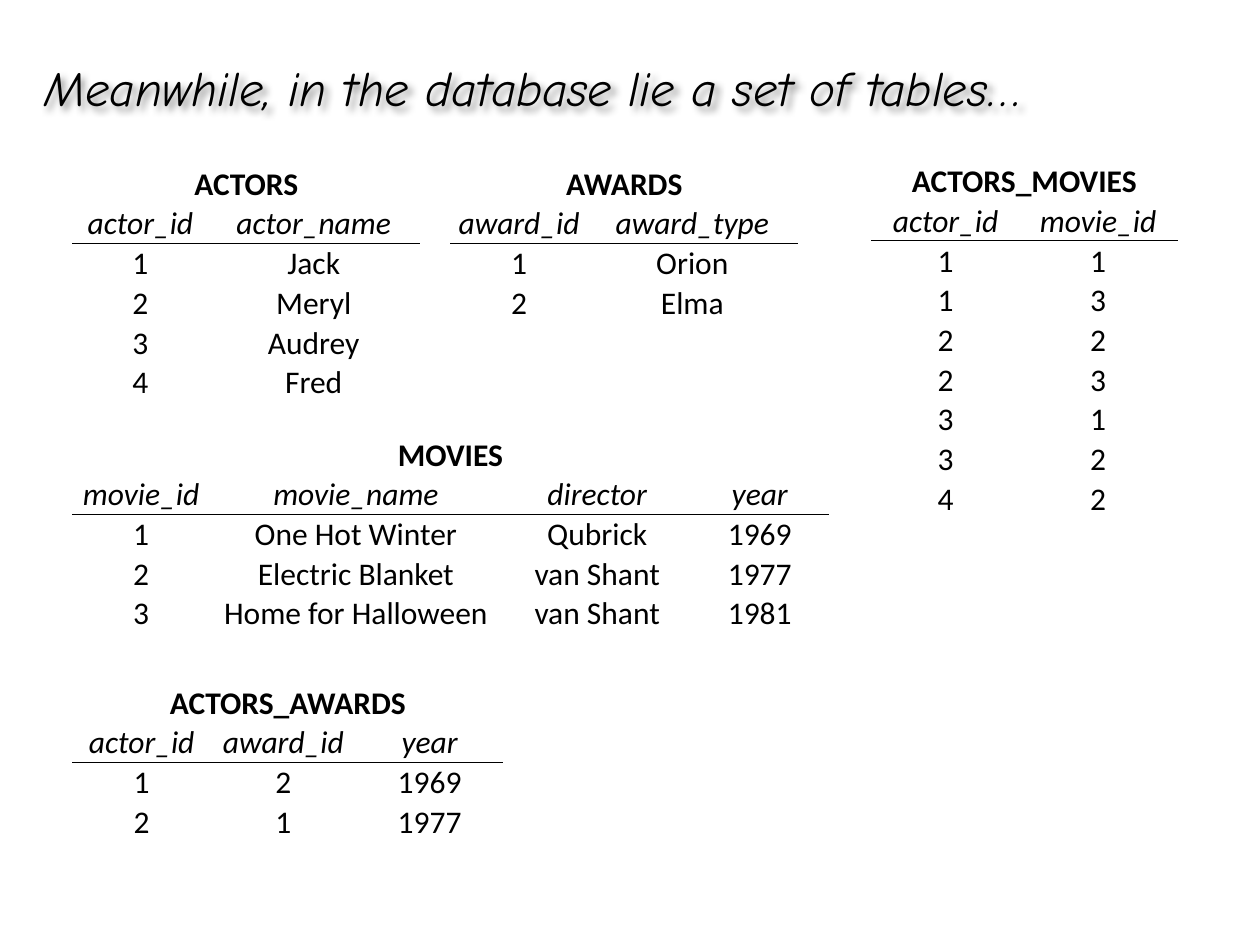
from pptx import Presentation
from pptx.dml.color import RGBColor
from pptx.enum.text import MSO_ANCHOR, PP_ALIGN
from pptx.oxml import parse_xml
from pptx.oxml.ns import nsdecls
from pptx.util import Inches, Pt

CENTER, LEFT = PP_ALIGN.CENTER, PP_ALIGN.LEFT
BOTTOM, MIDDLE = MSO_ANCHOR.BOTTOM, MSO_ANCHOR.MIDDLE
TITLE_ONLY = 5
BLACK = "000000"
ROW_HEIGHT = 0.31

# Table name, left, top, column widths, column names, records
DATABASE = [
    ("ACTORS", 0.58, 1.3, [1.07, 1.68], ["actor_id", "actor_name"],
     [("1", "Jack"), ("2", "Meryl"), ("3", "Audrey"), ("4", "Fred")]),
    ("MOVIES", 0.58, 3.45, [1.08, 2.33, 1.5, 1.08],
     ["movie_id", "movie_name", "director", "year"],
     [("1", "One Hot Winter", "Qubrick", "1969"),
      ("2", "Electric Blanket", "van Shant", "1977"),
      ("3", "Home for Halloween", "van Shant", "1981")]),
    ("ACTORS_MOVIES", 6.92, 1.28, [1.17, 1.25], ["actor_id", "movie_id"],
     [("1", "1"), ("1", "3"), ("2", "2"), ("2", "3"),
      ("3", "1"), ("3", "2"), ("4", "2")]),
    ("AWARDS", 3.58, 1.3, [1.08, 1.67], ["award_id", "award_type"],
     [("1", "Orion"), ("2", "Elma")]),
    ("ACTORS_AWARDS", 0.58, 5.42, [1.09, 1.16, 1.16],
     ["actor_id", "award_id", "year"],
     [("1", "2", "1969"), ("2", "1", "1977")]),
]


def rgb(hex_color):
    return RGBColor.from_string(hex_color)


def format_text(paragraph, font_name, size, align, bold=False, italic=False):
    paragraph.alignment = align
    for run in paragraph.runs:
        font = run.font
        font.name, font.size = font_name, Pt(size)
        font.bold, font.italic = bold, italic
        font.color.rgb = rgb(BLACK)


def add_rule(cell, side):
    """Draw a thin border on one side of a cell: "T" or "B"."""
    cell._tc.get_or_add_tcPr().insert(0, parse_xml(
        f'<a:ln{side} {nsdecls("a")} w="6350"><a:solidFill>'
        f'<a:srgbClr val="{BLACK}"/></a:solidFill></a:ln{side}>'))


def fill_cell(cell, text, bold=False, italic=False):
    cell.fill.background()
    cell.vertical_anchor = BOTTOM
    cell.margin_left = cell.margin_right = cell.margin_top = Inches(0.01)
    cell.margin_bottom = 0
    cell.text_frame.text = text
    format_text(cell.text_frame.paragraphs[0], "Calibri", 18, CENTER, bold, italic)


def add_database_table(slide, name, left, top, widths, fields, records):
    rows = [[name] + [""] * (len(fields) - 1), fields, *records]
    table = slide.shapes.add_table(
        len(rows), len(fields), Inches(left), Inches(top),
        Inches(sum(widths)), Inches(ROW_HEIGHT * len(rows))).table
    table.first_row = table.horz_banding = False
    for column, width in zip(table.columns, widths):
        column.width = Inches(width)

    for row_index, row in enumerate(rows):
        for column_index, text in enumerate(row):
            cell = table.cell(row_index, column_index)
            fill_cell(cell, text, bold=row_index == 0, italic=row_index == 1)
            # The rule runs between field names and the first record
            if row_index in (1, 2):
                add_rule(cell, "B" if row_index == 1 else "T")
    table.cell(0, 0).merge(table.cell(0, len(fields) - 1))


def add_title(slide, text):
    title = slide.shapes.title
    title.left, title.top = Inches(0.25), Inches(0.38)
    title.width, title.height = Inches(9), Inches(0.62)
    title.text_frame.text = text
    title.text_frame.vertical_anchor = MIDDLE
    format_text(title.text_frame.paragraphs[0], "Comic Neue", 28, LEFT, italic=True)
    # Soft shadow below and to the right of the letters
    title.fill.background()
    title._element.spPr.append(parse_xml(
        f'<a:effectLst {nsdecls("a")}><a:outerShdw blurRad="50800" dist="38100" '
        f'dir="2700000"><a:srgbClr val="{BLACK}"><a:alpha val="43000"/>'
        '</a:srgbClr></a:outerShdw></a:effectLst>'))


def main():
    presentation = Presentation()
    presentation.slide_width, presentation.slide_height = Inches(10), Inches(7.5)
    slide = presentation.slides.add_slide(presentation.slide_layouts[TITLE_ONLY])
    for database_table in DATABASE:
        add_database_table(slide, *database_table)
    add_title(slide, "Meanwhile, in the database lie a set of tables…")
    presentation.save("out.pptx")


if __name__ == "__main__":
    main()
